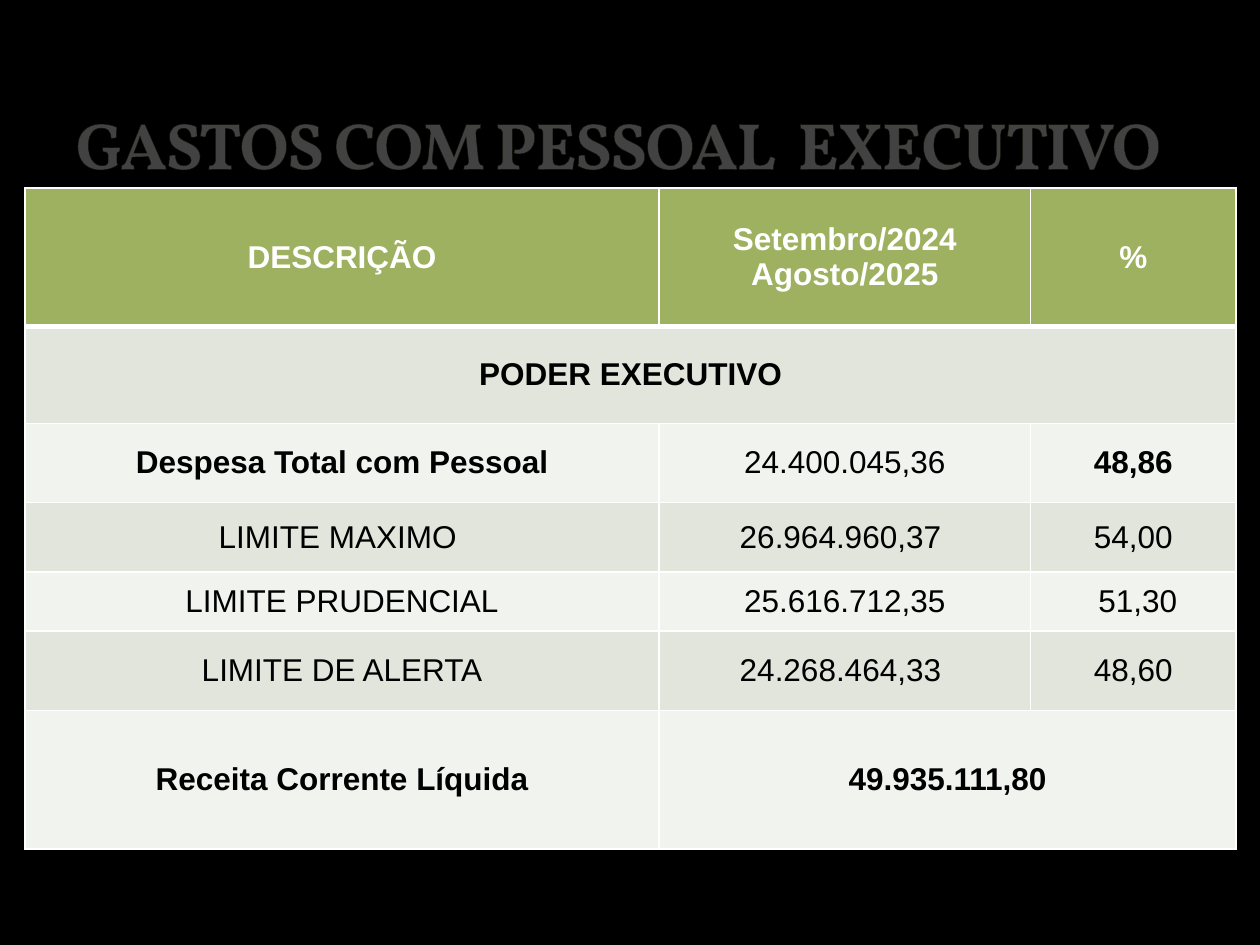
import pptx
import pptx.util
import pptx.dml.color
import pptx.enum.text
import lxml.etree
from pptx.oxml.ns import qn

# Content
HEAD = "GASTOS COM PESSOAL  EXECUTIVO"
ROWS = [
    ("DESCRIÇÃO", "Setembro/2024 Agosto/2025", "%"),
    ("PODER EXECUTIVO", "", ""),
    ("Despesa Total com Pessoal", "24.400.045,36", "48,86"),
    ("LIMITE MAXIMO ", "26.964.960,37 ", "54,00"),
    ("LIMITE PRUDENCIAL", "25.616.712,35", " 51,30"),
    ("LIMITE DE ALERTA", "24.268.464,33 ", "48,60"),
    ("Receita Corrente Líquida", "49.935.111,80", ""),
]
WIDTHS = [5.03, 2.95, 1.63]
HEIGHTS = [1.1, 0.77, 0.63, 0.55, 0.47, 0.63, 1.1]
BOLD = {(2, 0), (2, 2)}      # bold cells within the plain rows
BOLD_ROWS = {0, 1, 6}
MERGES = [((1, 0), (1, 2)), ((6, 1), (6, 2))]
GREEN, BANDS = "9EB160", ("F0F3EE", "E1E5DC")
WHITE, BLACK, EDGE = "FFFFFF", "000000", "3C4422"

Inches, Pt = pptx.util.Inches, pptx.util.Pt
ANCHOR = pptx.enum.text.MSO_ANCHOR
ALIGN = pptx.enum.text.PP_ALIGN


def paint(fill, tone):
    fill.solid()
    fill.fore_color.rgb = pptx.dml.color.RGBColor.from_string(tone)


def style(font, tone, **form):
    for key, value in form.items():
        setattr(font, key, value)
    paint(font.fill, tone)


def line(tag, width, tone, alpha=100):
    ln = lxml.etree.Element(qn(tag), w=str(int(Pt(width))))
    solid = lxml.etree.SubElement(ln, qn("a:solidFill"))
    clr = lxml.etree.SubElement(solid, qn("a:srgbClr"), val=tone)
    if alpha < 100:
        lxml.etree.SubElement(clr, qn("a:alpha"), val=str(alpha * 1000))
    return ln


# Slide
prs = pptx.Presentation()
prs.slide_width, prs.slide_height = Inches(10), Inches(7.5)
slide = prs.slides.add_slide(prs.slide_layouts[5])
paint(slide.background.fill, BLACK)

# Title
title = slide.shapes.title
box = {"left": 0.5, "top": 0.17, "width": 9, "height": 1.33}
for key, value in box.items():
    setattr(title, key, Inches(value))
frame = title.text_frame
frame.text = HEAD
frame.word_wrap = True
frame.auto_size = pptx.enum.text.MSO_AUTO_SIZE.NONE
frame.vertical_anchor = ANCHOR.BOTTOM
para = frame.paragraphs[0]
para.alignment = ALIGN.LEFT
run = para.runs[0]
style(run.font, WHITE, name="Vollkorn", size=Pt(37.8), bold=True)
props = run._r.get_or_add_rPr()
props.set("spc", "-100")
props.insert(0, line("a:ln", 0.25, EDGE, 25))

# Table
grid = slide.shapes.add_table(
    len(ROWS), len(WIDTHS), Inches(0.2), Inches(1.49),
    Inches(sum(WIDTHS)), Inches(sum(HEIGHTS))).table
for col, width in zip(grid.columns, WIDTHS):
    col.width = Inches(width)
for row, height in zip(grid.rows, HEIGHTS):
    row.height = Inches(height)
for start, end in MERGES:
    grid.cell(*start).merge(grid.cell(*end))

# Cells
for r, texts in enumerate(ROWS):
    for c, text in enumerate(texts):
        cell = grid.cell(r, c)
        cell.vertical_anchor = ANCHOR.MIDDLE
        paint(cell.fill, BANDS[r % 2] if r else GREEN)
        for i, side in enumerate(("a:lnL", "a:lnR", "a:lnT", "a:lnB")):
            thick = (r, side) in ((0, "a:lnB"), (1, "a:lnT"))
            cell._tc.get_or_add_tcPr().insert(
                i, line(side, 3 if thick else 1, WHITE))
        if text:
            para = cell.text_frame.paragraphs[0]
            para.alignment = ALIGN.CENTER
            run = para.add_run()
            run.text = text
            style(run.font, BLACK if r else WHITE, name="Arial",
                  size=Pt(18), bold=r in BOLD_ROWS or (r, c) in BOLD)

prs.save("out.pptx")
